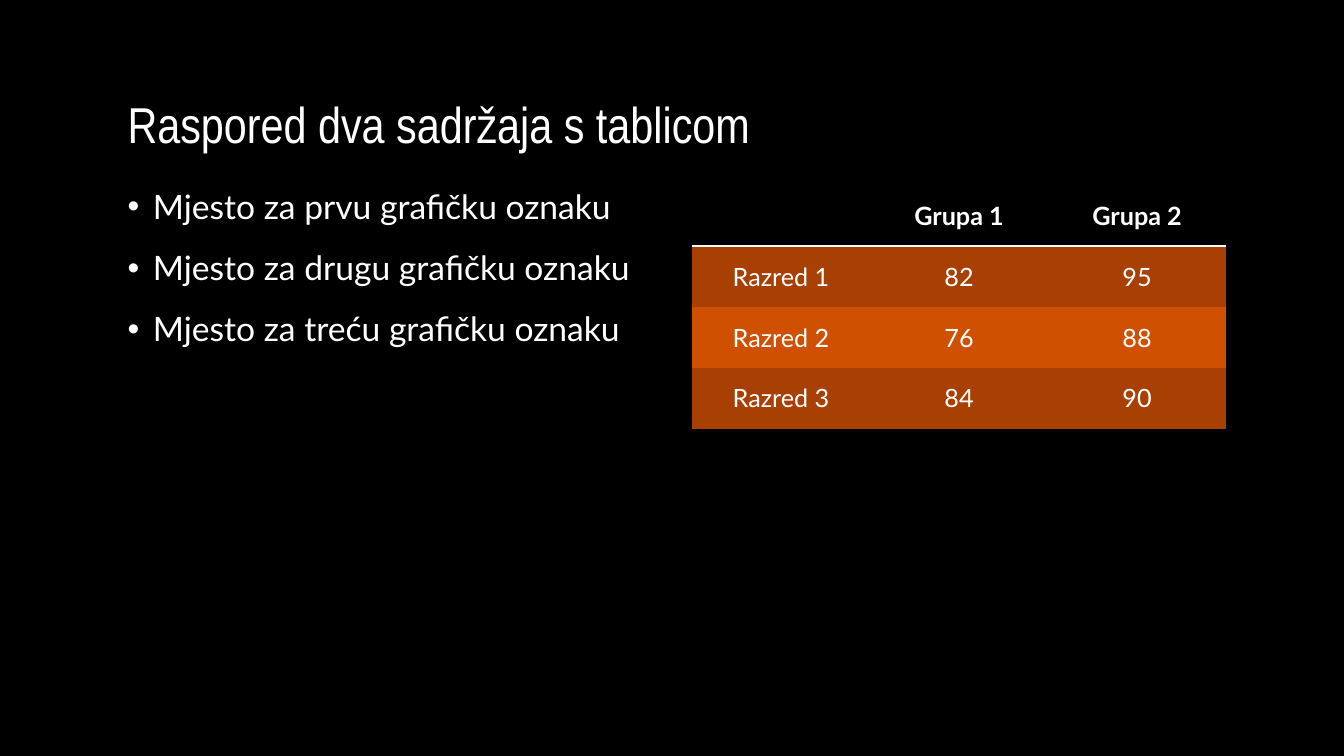
from lxml import etree
from pptx import Presentation
from pptx import util as u
from pptx.dml.color import RGBColor
from pptx.enum import text
from pptx.oxml.ns import qn

WHITE, BLACK = "FFFFFF", "000000"
BANDS = ("A74002", "D05002")
PLAIN_TABLE_STYLE = "{2D5ABB26-0587-4C30-8999-92F81FD0307C}"
TITLE = "Raspored dva sadržaja s tablicom"
BULLETS = (
    "Mjesto za prvu grafičku oznaku",
    "Mjesto za drugu grafičku oznaku",
    "Mjesto za treću grafičku oznaku",
)
SCORES = (
    ("", "Grupa 1", "Grupa 2"),
    ("Razred 1", "82", "95"),
    ("Razred 2", "76", "88"),
    ("Razred 3", "84", "90"),
)


def paint(color_format, color):
    """Apply a hex colour to a fill's or font's colour format."""
    color_format.rgb = RGBColor.from_string(color)


def style_font(paragraph, name, size, bold=False):
    """Give a paragraph its white font."""
    font = paragraph.font
    font.name, font.size, font.bold = name, u.Pt(size), bold
    paint(font.color, WHITE)


def place(shape, box, anchor):
    """Move a placeholder into its box and fix its text frame."""
    shape.left, shape.top, shape.width, shape.height = box
    frame = shape.text_frame
    frame.word_wrap = True
    frame.auto_size = text.MSO_AUTO_SIZE.NONE
    frame.vertical_anchor = anchor
    return frame


def add_title(shape, box):
    """Fill the title placeholder."""
    frame = place(shape, box, text.MSO_ANCHOR.BOTTOM)
    frame.text = TITLE
    paragraph = frame.paragraphs[0]
    paragraph.alignment = text.PP_ALIGN.LEFT
    paragraph.line_spacing = 0.9
    style_font(paragraph, "Arial Narrow", 36)


def add_bullets(shape, box):
    """Fill the body placeholder with the bulleted list."""
    frame = place(shape, box, text.MSO_ANCHOR.TOP)
    frame.text = "\n".join(BULLETS)
    indent = u.Cm(0.64)
    for index, paragraph in enumerate(frame.paragraphs):
        properties = paragraph._p.get_or_add_pPr()
        properties.set("marL", str(indent))
        properties.set("indent", str(-indent))
        etree.SubElement(properties, qn("a:buFont"), typeface="Arial")
        etree.SubElement(properties, qn("a:buChar"), char="•")
        paragraph.line_spacing = 0.9
        paragraph.space_before = u.Pt(18 if index else 0)
        style_font(paragraph, "Lato", 24)


def underline_cell(cell):
    """Draw a white rule along the bottom of a cell."""
    line = etree.Element(qn("a:lnB"), w=str(u.Pt(2)))
    fill = etree.SubElement(line, qn("a:solidFill"))
    etree.SubElement(fill, qn("a:srgbClr"), val=WHITE)
    cell._tc.get_or_add_tcPr().insert(0, line)


def add_scores(slide, box):
    """Add the table of scores by class and group."""
    table = slide.shapes.add_table(len(SCORES), len(SCORES[0]), *box).table
    table._tbl.tblPr.find(qn("a:tableStyleId")).text = PLAIN_TABLE_STYLE
    for row, values in enumerate(SCORES):
        for column, value in enumerate(values):
            cell = table.cell(row, column)
            cell.text = value
            cell.vertical_anchor = text.MSO_ANCHOR.MIDDLE
            cell.fill.solid()
            paint(cell.fill.fore_color, BANDS[(row - 1) % 2] if row else BLACK)
            paragraph = cell.text_frame.paragraphs[0]
            paragraph.alignment = text.PP_ALIGN.CENTER
            style_font(paragraph, "Lato", 18, bold=row == 0)
            if row == 0:
                underline_cell(cell)


def build_two_content(presentation, box):
    """Build the slide with a title above a list and a table."""
    slide = presentation.slides.add_slide(presentation.slide_layouts[1])
    background = slide.background.fill
    background.solid()
    paint(background.fore_color, BLACK)
    left, top, width, height = box
    content_top = top + u.Cm(3.82)
    half = u.Cm(13.46)
    add_title(slide.shapes.title, (left, top, width, u.Cm(3.18)))
    add_bullets(
        slide.placeholders[1],
        (left, content_top, half, top + height - content_top),
    )
    add_scores(slide, (left + width - half, content_top, half, u.Cm(6.14)))


def main():
    """Create and save the presentation."""
    presentation = Presentation()
    presentation.slide_width = u.Cm(33.87)
    presentation.slide_height = u.Cm(19.05)
    build_two_content(
        presentation, (u.Cm(2.96), u.Cm(0.84), u.Cm(27.94), u.Cm(15.88))
    )
    presentation.save("out.pptx")


if __name__ == "__main__":
    main()
